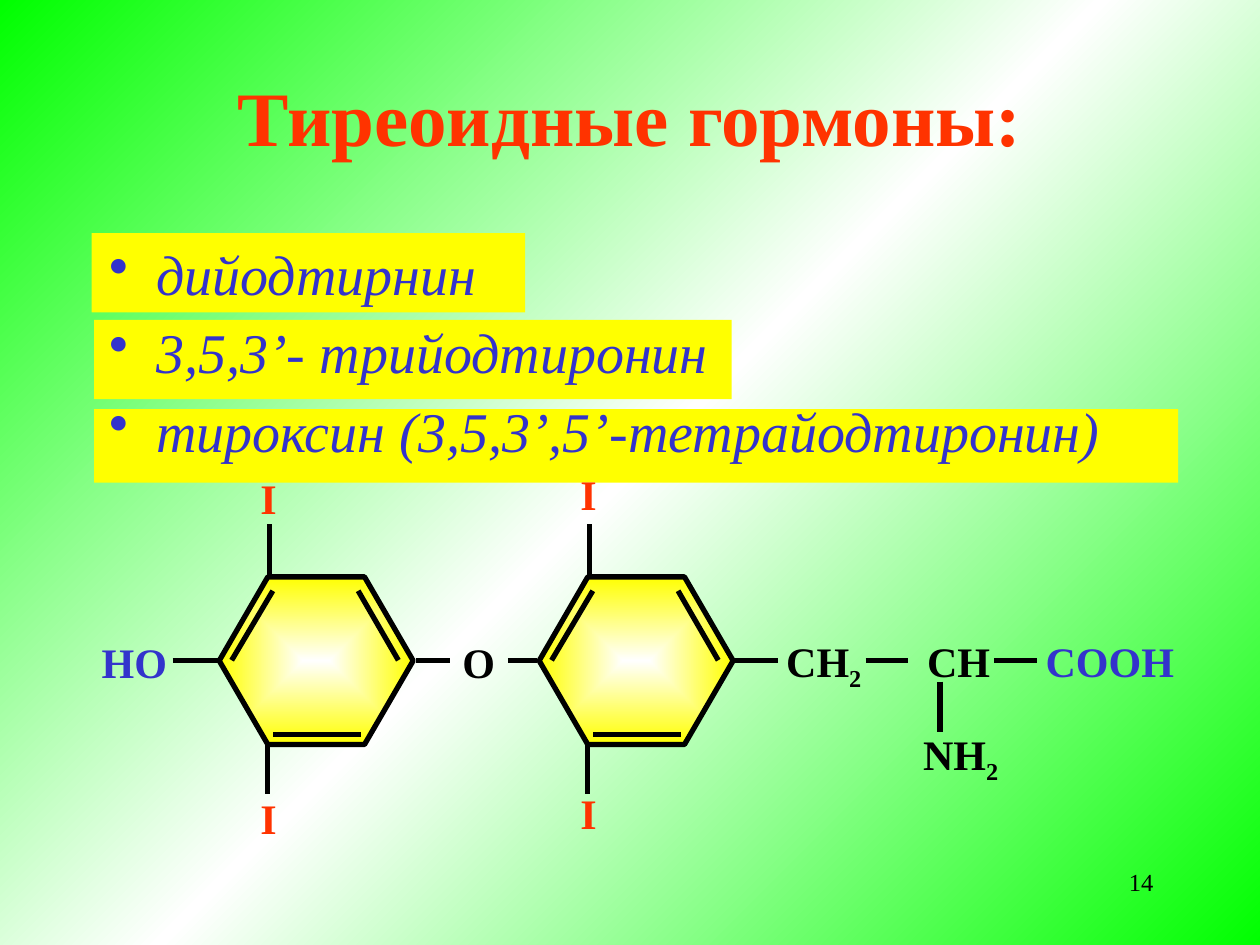
from lxml import etree
from pptx import Presentation
from pptx import util as u
from pptx.dml.color import RGBColor
from pptx.enum import shapes, text
from pptx.oxml import parse_xml
from pptx.oxml.ns import nsdecls, qn

BLACK, RED, BLUE = "000000", "FF3300", "3333CC"
YELLOW, WHITE, GREEN = "FFFF00", "FFFFFF", "00FF00"


def color(value):
    return RGBColor.from_string(value)


def gradient(stops, direction):
    marks = "".join(
        f'<a:gs pos="{pos * 1000}"><a:srgbClr val="{value}"/></a:gs>' for pos, value in stops
    )
    return parse_xml(
        f'<a:gradFill {nsdecls("a")} rotWithShape="1"><a:gsLst>{marks}</a:gsLst>{direction}</a:gradFill>'
    )


class Painter:
    """Draws the elements of one slide in a shared style; lengths are in centimetres."""

    font = "Times New Roman"
    stroke = u.Pt(3)

    def __init__(self, page):
        self.page = page

    def background(self, stops, angle):
        fill = self.page.background.fill
        fill.solid()
        holder = self.page.background._cSld.bg.bgPr
        old = holder.find(qn("a:solidFill"))
        holder.replace(old, gradient(stops, f'<a:lin ang="{angle * 60000}" scaled="1"/>'))

    def band(self, left, top, width, height):
        box = self.page.shapes.add_shape(
            shapes.MSO_SHAPE.RECTANGLE, *map(u.Cm, (left, top, width, height))
        )
        box.shadow.inherit = False
        box.fill.solid()
        box.fill.fore_color.rgb = color(YELLOW)
        box.line.fill.background()

    def hexagon(self, left, top, width, height):
        ring = self.page.shapes.add_shape(
            shapes.MSO_SHAPE.HEXAGON, *map(u.Cm, (left, top, width, height))
        )
        ring.adjustments[0] = 0.29
        ring.shadow.inherit = False
        ring.line.color.rgb = color(BLACK)
        ring.line.width = self.stroke
        ring.fill.solid()
        holder = ring._element.spPr
        center = '<a:path path="shape"><a:fillToRect l="50000" t="50000" r="50000" b="50000"/></a:path>'
        holder.replace(
            holder.find(qn("a:solidFill")), gradient([(0, WHITE), (100, YELLOW)], center)
        )

    def bond(self, x1, y1, x2, y2):
        line = self.page.shapes.add_connector(
            shapes.MSO_CONNECTOR.STRAIGHT, *map(u.Cm, (x1, y1, x2, y2))
        )
        line.line.color.rgb = color(BLACK)
        line.line.width = self.stroke
        etree.SubElement(line._element.spPr, qn("a:effectLst"))

    def span(self, para, words, size, shade, bold=False, italic=False):
        span = para.add_run()
        span.text = words
        span.font.name = self.font
        span.font.size = u.Pt(size)
        span.font.color.rgb = color(shade)
        span.font.bold = bold
        span.font.italic = italic
        return span

    def frame(self, left, top, width, height, wrap=True):
        box = self.page.shapes.add_textbox(*map(u.Cm, (left, top, width, height)))
        box.text_frame.word_wrap = wrap
        return box.text_frame

    def line_of_text(self, place, words, size, shade, align, bold=False):
        frame = self.frame(*place)
        frame.vertical_anchor = text.MSO_ANCHOR.MIDDLE if bold else text.MSO_ANCHOR.TOP
        para = frame.paragraphs[0]
        para.alignment = align
        self.span(para, words, size, shade, bold)

    def atom(self, left, top, width, symbol, shade=BLACK, index=""):
        frame = self.frame(left, top, width, 1.27, wrap=False)
        para = frame.paragraphs[0]
        self.span(para, symbol, 24, shade, bold=True)
        if index:
            small = self.span(para, index, 24, shade, bold=True)
            small.font._element.set("baseline", "-25000")

    def bullets(self, place, items):
        frame = self.frame(*place)
        for number, item in enumerate(items):
            para = frame.add_paragraph() if number else frame.paragraphs[0]
            props = para._p.get_or_add_pPr()
            props.set("marL", str(u.Cm(0.95)))
            props.set("indent", str(u.Cm(-0.95)))
            before = etree.SubElement(props, qn("a:spcBef"))
            etree.SubElement(before, qn("a:spcPct")).set("val", "20000")
            etree.SubElement(props, qn("a:buChar")).set("char", "•")
            self.span(para, item, 32, BLUE, italic=True)


def draw_ring(painter, left, iodine_top, iodine_bottom):
    top = 11.63
    painter.hexagon(left, top, 3.91, 3.38)
    bonds = [
        (0.25, 1.68, 1.08, 0.28),
        (3.61, 1.68, 2.8, 0.28),
        (2.85, 3.18, 1.08, 3.18),
        (1.01, 0, 1.01, -1.07),
        (0.97, 3.33, 0.97, 4.37),
    ]
    for x1, y1, x2, y2 in bonds:
        painter.bond(left + x1, top + y1, left + x2, top + y2)
    for height in (iodine_top, iodine_bottom):
        painter.atom(left + 0.58, height, 0.84, "I", RED)


def main():
    deck = Presentation()
    deck.slide_width, deck.slide_height = u.Cm(25.4), u.Cm(19.05)
    painter = Painter(deck.slides.add_slide(deck.slide_layouts[6]))
    painter.background([(0, GREEN), (50, WHITE), (100, GREEN)], 45)

    for band in [(1.85, 4.7, 8.74, 1.6), (1.9, 6.45, 12.85, 1.6), (1.9, 8.25, 21.85, 1.48)]:
        painter.band(*band)

    draw_ring(painter, 4.42, 9.4, 15.85)
    draw_ring(painter, 10.87, 9.32, 15.75)

    axis = 13.32
    for start, end in [(3.48, 4.42), (8.38, 9.07), (10.24, 10.82),
                       (14.78, 15.68), (17.45, 18.3), (20.04, 20.9)]:
        painter.bond(start, axis, end, axis)
    painter.bond(18.95, 13.74, 18.95, 14.76)

    painter.atom(1.8, 12.7, 1.83, "HO", BLUE)
    painter.atom(9.07, 12.7, 1.17, "О")
    painter.atom(15.6, 12.68, 2.06, "CH", index="2")
    painter.atom(18.44, 12.68, 1.78, "CH")
    painter.atom(20.83, 12.68, 3.1, "COOH", BLUE)
    painter.atom(18.36, 14.56, 2.06, "NH", index="2")

    painter.line_of_text((1.9, 0.74, 21.6, 3.18), "Тиреоидные гормоны:", 44, RED,
                         text.PP_ALIGN.CENTER, bold=True)
    painter.bullets((1.95, 4.7, 21.6, 11.43), [
        "дийодтирнин",
        "3,5,3’- трийодтиронин",
        "тироксин (3,5,3’,5’-тетрайодтиронин)",
    ])
    painter.line_of_text((18.2, 17.35, 5.3, 1.27), "14", 14, BLACK, text.PP_ALIGN.RIGHT)
    deck.save("out.pptx")


if __name__ == "__main__":
    main()
